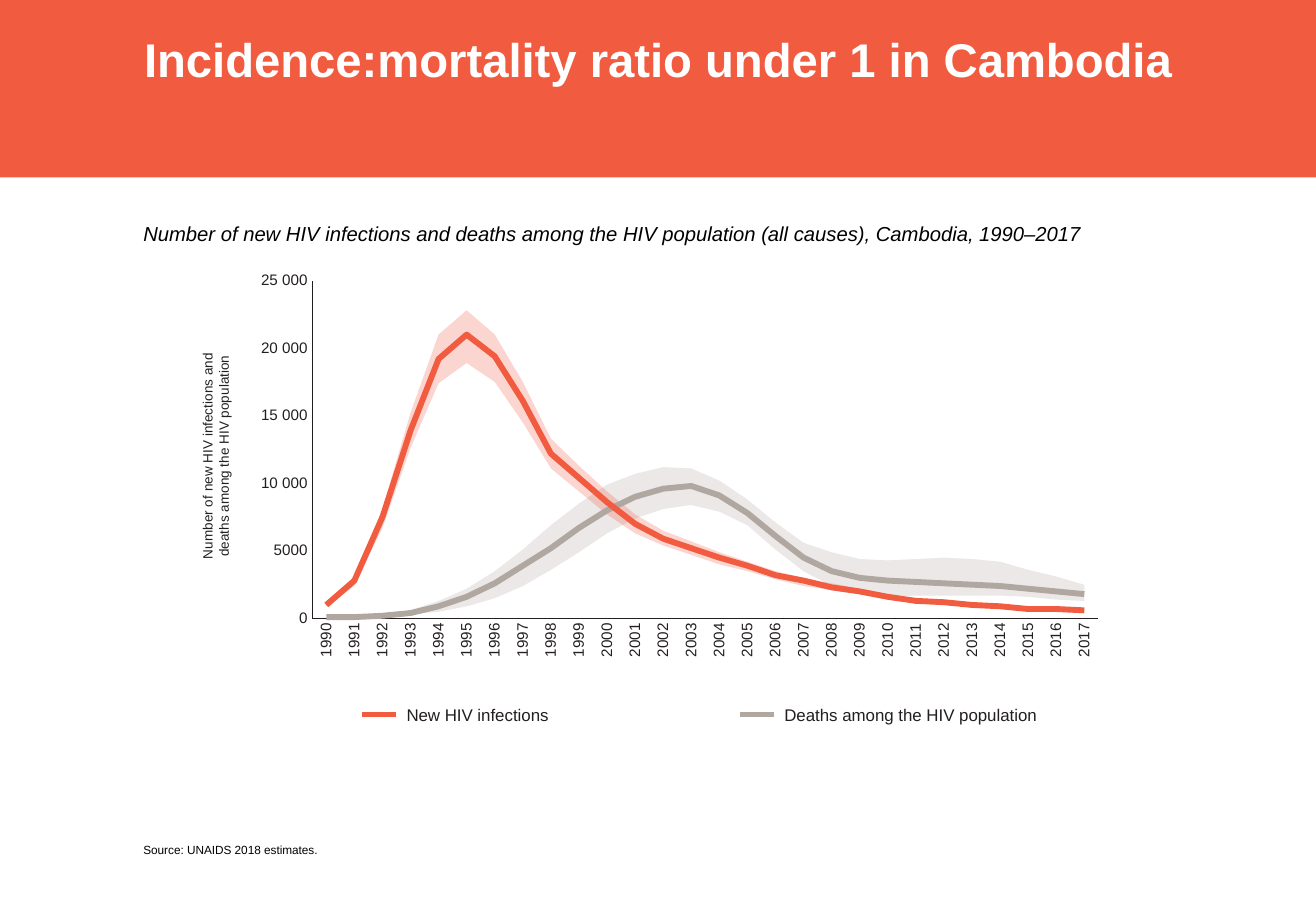
from lxml.etree import SubElement
from pptx import Presentation
from pptx.chart.data import CategoryChartData
from pptx.dml.color import RGBColor
from pptx.enum.chart import XL_CHART_TYPE, XL_TICK_MARK
from pptx.enum.shapes import MSO_CONNECTOR, MSO_SHAPE
from pptx.enum.text import PP_ALIGN
from pptx.oxml import parse_xml
from pptx.oxml.ns import nsdecls, qn
from pptx.util import Inches, Pt

theme = {
    "font": "Arial",
    "white": RGBColor.from_string("FFFFFF"),
    "black": RGBColor.from_string("000000"),
    "ink": RGBColor.from_string("231F20"),
    "red": RGBColor.from_string("F15B40"),
    "grey": RGBColor.from_string("B0A7A0"),
    "title": Pt(28),
    "subtitle": Pt(12),
    "legend": Pt(10),
    "tick": Pt(9),
    "axis": Pt(8),
    "source": Pt(7),
    "hairline": Pt(0.25),
    "key": Pt(3),
    "curve": Pt(3.5),
}

years = range(1990, 2018)
top_value = 25000
series = [
    {
        "name": "Deaths among the HIV population",
        "color": theme["grey"],
        "key_left": 56.23,
        "middle": [100, 100, 200, 400, 900, 1600, 2600, 3900, 5200, 6700, 8000, 9000, 9600, 9800,
                   9100, 7800, 6100, 4500, 3500, 3000, 2800, 2700, 2600, 2500, 2400, 2200, 2000, 1800],
        "upper": [0, 100, 300, 600, 1300, 2200, 3500, 5100, 6900, 8500, 9900, 10700, 11200, 11100,
                  10200, 8800, 7100, 5600, 4900, 4400, 4300, 4400, 4500, 4400, 4200, 3600, 3100, 2500],
        "lower": [0, 0, 100, 300, 500, 900, 1500, 2400, 3600, 4900, 6300, 7400, 8100, 8400,
                  7900, 6900, 5100, 3500, 2400, 1900, 1600, 1700, 1700, 1700, 1700, 1600, 1400, 1300],
    },
    {
        "name": "New HIV infections",
        "color": theme["red"],
        "key_left": 27.52,
        "middle": [1000, 2800, 7500, 13900, 19200, 21000, 19400, 16100, 12200, 10400, 8600, 7000, 5900, 5200,
                   4500, 3900, 3200, 2800, 2300, 2000, 1600, 1300, 1200, 1000, 900, 700, 700, 600],
        "upper": [1100, 3000, 8100, 15200, 21000, 22800, 21000, 17500, 13300, 11300, 9400, 7700, 6500, 5700,
                  4900, 4200, 3500, 3000, 2600, 2200, 1800, 1400, 1300, 1200, 1000, 800, 800, 700],
        "lower": [900, 2400, 6700, 12600, 17400, 18900, 17500, 14500, 11100, 9400, 7700, 6300, 5400, 4700,
                  4000, 3500, 2900, 2400, 2100, 1800, 1400, 1200, 1100, 900, 800, 700, 700, 600],
    },
]

deck = Presentation()
deck.slide_width, deck.slide_height = Inches(10.83), Inches(7.5)
page = deck.slides.add_slide(deck.slide_layouts[6])
column, row = deck.slide_width / 100, deck.slide_height / 100


def place(left, top, width, height):
    return round(left * column), round(top * row), round(width * column), round(height * row)


def add_text(area, words, size, color, align=PP_ALIGN.LEFT, insets=(0, 0.01, 0, 0)):
    box = page.shapes.add_textbox(*place(*area))
    frame = box.text_frame
    frame.word_wrap = True
    frame.margin_left, frame.margin_top, frame.margin_right, frame.margin_bottom = map(Inches, insets)
    para = frame.paragraphs[0]
    para.alignment = align
    span = para.add_run()
    span.text = words
    span.font.name, span.font.size = theme["font"], size
    span.font.color.rgb = color
    return frame, span


banner = page.shapes.add_shape(MSO_SHAPE.RECTANGLE, *place(0, 0, 100, 19.47))
banner.shadow.inherit = False
banner.fill.solid()
banner.fill.fore_color.rgb = theme["red"]
banner.line.fill.background()

title_frame, title = add_text((0, 2.67, 100, 7.6), "Incidence:mortality ratio under 1 in Cambodia",
                              theme["title"], theme["white"], PP_ALIGN.CENTER, (0.1, 0.05, 0.1, 0.05))
title.font.bold = True
subtitle_frame, subtitle = add_text(
    (0, 23.6, 100, 4),
    "Number of new HIV infections and deaths among the HIV population (all causes), Cambodia, 1990–2017",
    theme["subtitle"], theme["black"], insets=(1.18, 0.05, 0.31, 0.05))
subtitle.font.italic = True
add_text((0, 91.87, 100, 2.93), "Source: UNAIDS 2018 estimates.",
         theme["source"], theme["black"], insets=(1.18, 0.05, 0.2, 0.05))

chart_area = (18, 29, 66, 47)
plot_area = (23.73, 30.8, 59.74, 37.1)
plot_left, plot_top, plot_width, plot_height = place(*plot_area)
year_step = plot_width / len(years)

for item in series:
    edges = [
        [(round(plot_left + (index + 0.5) * year_step),
          round(plot_top + plot_height * (1 - value / top_value)))
         for index, value in enumerate(item[edge])]
        for edge in ("upper", "lower")
    ]
    outline = edges[0] + edges[1][::-1]
    builder = page.shapes.build_freeform(*outline[0])
    builder.add_line_segments(outline[1:], close=True)
    band = builder.convert_to_shape()
    band.shadow.inherit = False
    band.fill.solid()
    band.fill.fore_color.rgb = item["color"]
    band.line.fill.background()
    tint = band.fill._xPr.find(qn("a:solidFill"))[0]
    SubElement(tint, qn("a:alpha")).set("val", "25000")

data = CategoryChartData()
data.categories = [str(year) for year in years]
for item in series:
    data.add_series(item["name"], item["middle"])
chart = page.shapes.add_chart(XL_CHART_TYPE.LINE, *place(*chart_area), data).chart
chart.has_title = False
chart.has_legend = False
chart.font.name, chart.font.size = theme["font"], theme["tick"]
chart.font.color.rgb = theme["ink"]

for item, curve in zip(series, chart.plots[0].series):
    curve.smooth = False
    curve.format.line.width = theme["curve"]
    curve.format.line.color.rgb = item["color"]

for axis in (chart.category_axis, chart.value_axis):
    axis.has_major_gridlines = False
    axis.major_tick_mark = axis.minor_tick_mark = XL_TICK_MARK.NONE
    axis.format.line.width = theme["hairline"]
    axis.format.line.color.rgb = theme["ink"]
    axis.tick_labels.font.name, axis.tick_labels.font.size = theme["font"], theme["tick"]
    axis.tick_labels.font.color.rgb = theme["ink"]
years_body = chart.category_axis._element.find(qn("c:txPr")).find(qn("a:bodyPr"))
years_body.set("rot", "-5400000")
years_body.set("vert", "horz")
scale = chart.value_axis
scale.minimum_scale, scale.maximum_scale, scale.major_unit = 0, top_value, 5000
scale.tick_labels.number_format = r"[>=10000]##\ ##0;0"
scale.tick_labels.number_format_is_linked = False

plot_node = chart._chartSpace.find(".//" + qn("c:plotArea"))
for old_layout in plot_node.findall(qn("c:layout")):
    plot_node.remove(old_layout)
shares = {
    "x": (plot_area[0] - chart_area[0]) / chart_area[2],
    "y": (plot_area[1] - chart_area[1]) / chart_area[3],
    "w": plot_area[2] / chart_area[2],
    "h": plot_area[3] / chart_area[3],
}
modes = '<c:layoutTarget val="inner"/><c:xMode val="edge"/><c:yMode val="edge"/>'
sizes = "".join(f'<c:{name} val="{share:.4f}"/>' for name, share in shares.items())
plot_node.insert(0, parse_xml(
    f'<c:layout {nsdecls("c")}><c:manualLayout>{modes}{sizes}</c:manualLayout></c:layout>'))

axis_frame, axis_title = add_text(
    (15.14, 38.27, 2.5, 23.47), "Number of new HIV infections and deaths among the HIV population",
    theme["axis"], theme["ink"], PP_ALIGN.CENTER)
axis_frame._txBody.bodyPr.set("vert", "vert270")

for item in series:
    left, top, length, drop = place(item["key_left"], 78.4, 2.59, 0)
    key = page.shapes.add_connector(MSO_CONNECTOR.STRAIGHT, left, top, left + length, top)
    key.line.width = theme["key"]
    key.line.color.rgb = item["color"]
    SubElement(key._element.spPr, qn("a:effectLst"))
    add_text((item["key_left"] + 3.37, 77.2, 23, 2.4), item["name"], theme["legend"], theme["ink"])

deck.save("out.pptx")
